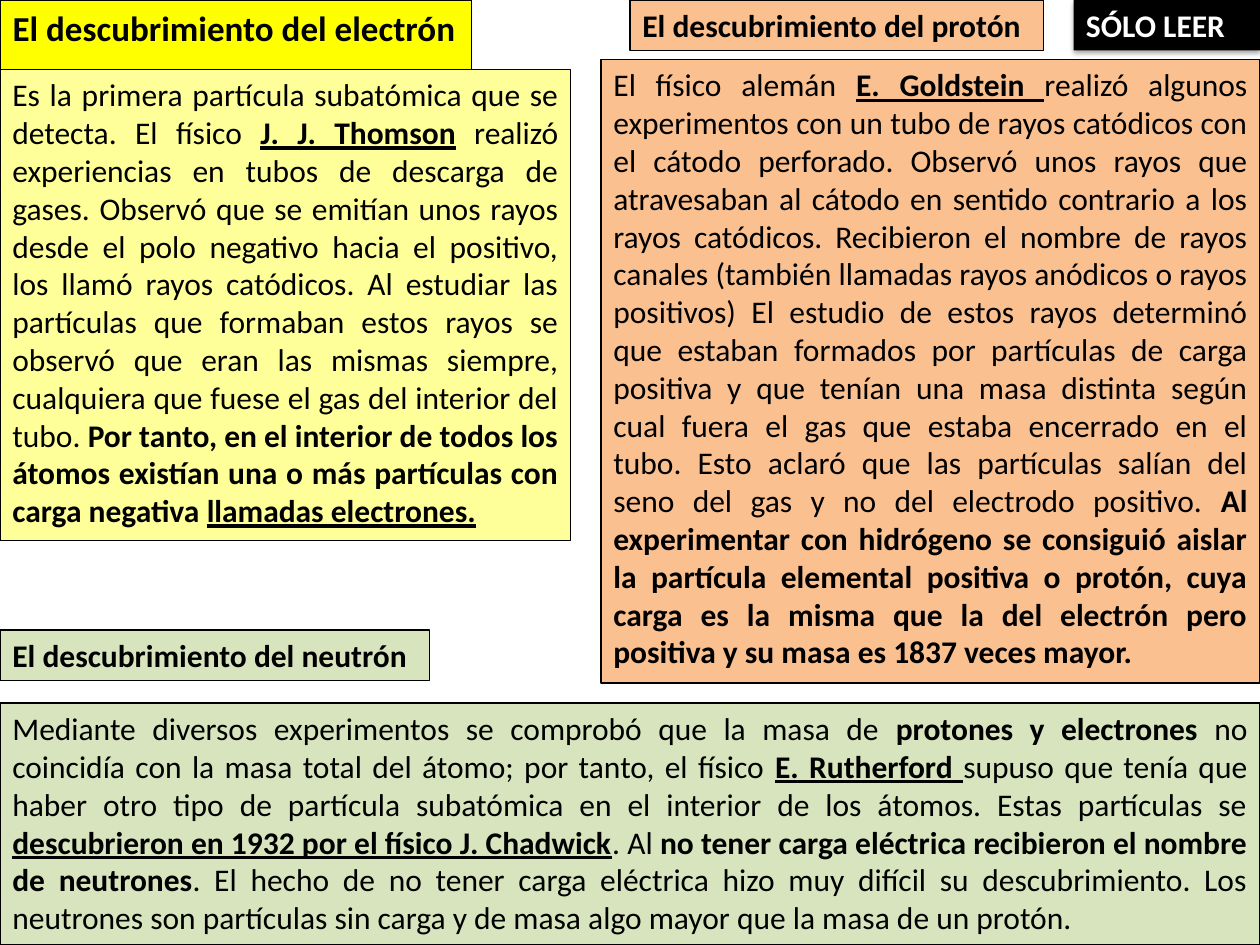
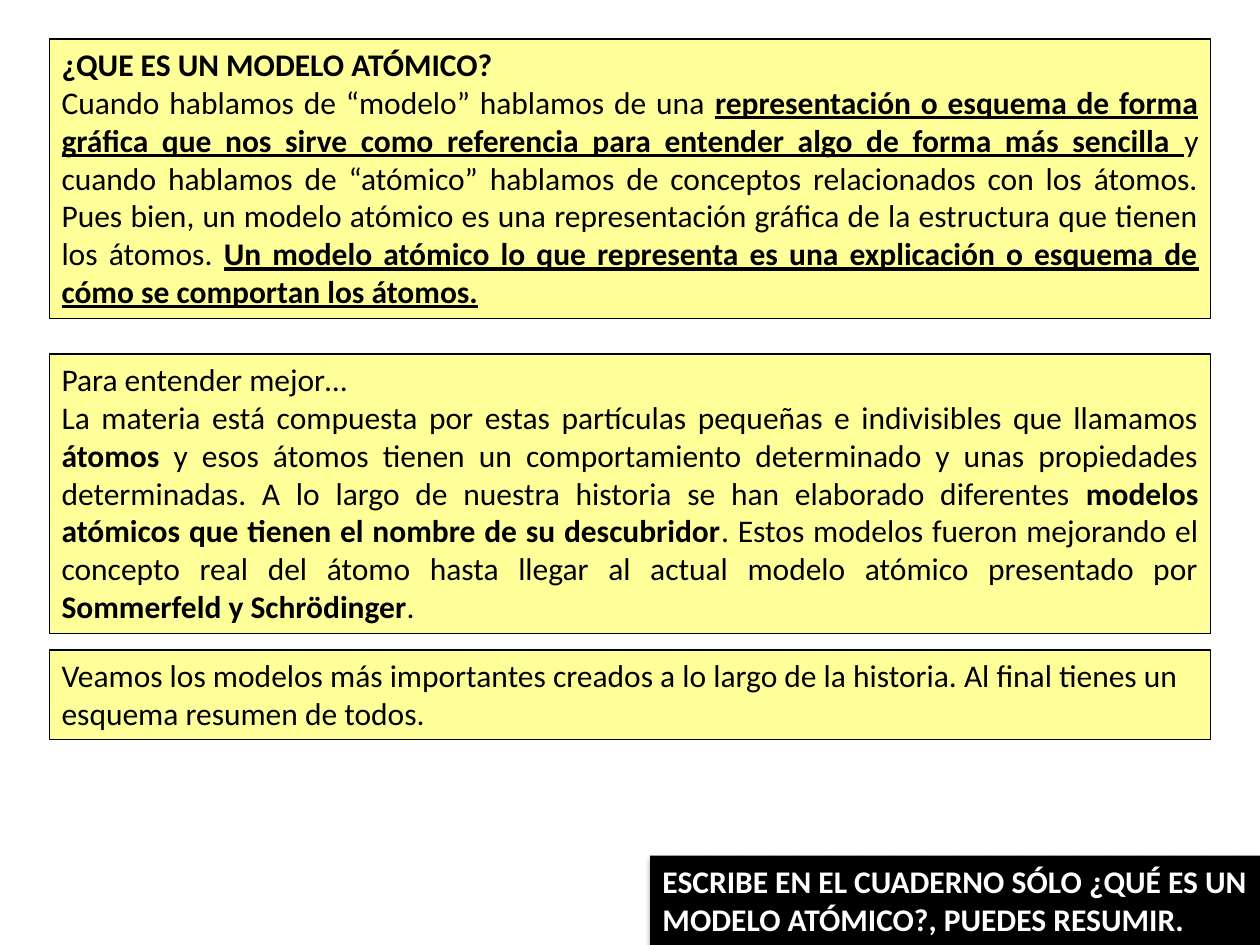
from dataclasses import dataclass

from lxml import etree
from pptx import Presentation
from pptx.dml.color import RGBColor
from pptx.enum import text
from pptx.oxml.ns import qn
from pptx.util import Inches, Pt


@dataclass(frozen=True)
class Theme:
    font: str = "Calibri"
    heading_size: int = 20
    text_size: int = 18
    line_width: float = 0.75
    ink: str = "000000"
    paper: str = "FFFFFF"
    bright_yellow: str = "FFFF00"
    yellow: str = "FFFF99"
    orange: str = "FAC090"
    green: str = "D7E4BD"


THEME = Theme()
JUSTIFY = text.PP_ALIGN.JUSTIFY
LEFT = text.PP_ALIGN.LEFT

PLAIN = {"bold": False, "underline": False}
BOLD = {"bold": True, "underline": False}
KEY = {"bold": True, "underline": True}

SLIDE_WIDTH, SLIDE_HEIGHT = 10, 7.5
HEADING_HEIGHT = 0.4
MODEL_LEFT = 0.39
MODEL_WIDTH = SLIDE_WIDTH - 2 * MODEL_LEFT

ELECTRON = [[
    ("Es la primera partícula subatómica que se detecta. El físico ", PLAIN),
    ("J. J. Thomson", KEY),
    (" realizó experiencias en tubos de descarga de gases. Observó que se "
     "emitían unos rayos desde el polo negativo hacia el positivo, los llamó "
     "rayos catódicos. Al estudiar las partículas que formaban estos rayos se "
     "observó que eran las mismas siempre, cualquiera que fuese el gas del "
     "interior del tubo. ", PLAIN),
    ("Por tanto, en el interior de todos los átomos existían una o más "
     "partículas con carga negativa ", BOLD),
    ("llamadas electrones.", KEY),
]]

PROTON = [[
    ("El físico alemán ", PLAIN),
    ("E. Goldstein ", KEY),
    ("realizó algunos experimentos con un tubo de rayos catódicos con el "
     "cátodo perforado. Observó unos rayos que atravesaban al cátodo en "
     "sentido contrario a los rayos catódicos. Recibieron el nombre de rayos "
     "canales (también llamadas rayos anódicos o rayos positivos) El estudio "
     "de estos rayos determinó que estaban formados por partículas de carga "
     "positiva y que tenían una masa distinta según cual fuera el gas que "
     "estaba encerrado en el tubo. Esto aclaró que las partículas salían del "
     "seno del gas y no del electrodo positivo. ", PLAIN),
    ("Al experimentar con hidrógeno se consiguió aislar la partícula "
     "elemental positiva o protón, cuya carga es la misma que la del electrón "
     "pero positiva y su masa es 1837 veces mayor.", BOLD),
]]

NEUTRON = [[
    ("Mediante diversos experimentos se comprobó que la masa de ", PLAIN),
    ("protones y electrones ", BOLD),
    ("no coincidía con la masa total del átomo; por tanto, el físico ", PLAIN),
    ("E. Rutherford ", KEY),
    ("supuso que tenía que haber otro tipo de partícula subatómica en el "
     "interior de los átomos. Estas partículas se ", PLAIN),
    ("descubrieron en 1932 por el físico J. Chadwick", KEY),
    (". Al ", PLAIN),
    ("no tener carga eléctrica recibieron el nombre de neutrones", BOLD),
    (". El hecho de no tener carga eléctrica hizo muy difícil su "
     "descubrimiento. Los neutrones son partículas sin carga y de masa algo "
     "mayor que la masa de un protón.", PLAIN),
]]

MODEL_DEFINITION = [
    [("¿QUE ES UN MODELO ATÓMICO? ", BOLD)],
    [
        ("Cuando hablamos de “modelo” hablamos de una ", PLAIN),
        ("representación o esquema de forma gráfica que nos sirve como "
         "referencia para entender algo de forma más sencilla ", KEY),
        ("y cuando hablamos de “atómico” hablamos de conceptos relacionados "
         "con los átomos. Pues bien, un modelo atómico es una representación "
         "gráfica de la estructura que tienen los átomos. ", PLAIN),
        ("Un modelo atómico lo que representa es una explicación o esquema "
         "de cómo se comportan los átomos.", KEY),
    ],
]

MODEL_HISTORY = [
    [("Para entender mejor…", PLAIN)],
    [
        ("La materia está compuesta por estas partículas pequeñas e "
         "indivisibles que llamamos ", PLAIN),
        ("átomos", BOLD),
        (" y esos átomos tienen un comportamiento determinado y unas "
         "propiedades determinadas. A lo largo de nuestra historia se han "
         "elaborado diferentes ", PLAIN),
        ("modelos atómicos que tienen el nombre de su descubridor", BOLD),
        (". Estos modelos fueron mejorando el concepto real del átomo hasta "
         "llegar al actual modelo atómico presentado por ", PLAIN),
        ("Sommerfeld y Schrödinger", BOLD),
        (". ", PLAIN),
    ],
]

MODEL_PREVIEW = [[
    ("Veamos los modelos más importantes creados a lo largo de la historia. "
     "Al final tienes un esquema resumen de todos.", PLAIN),
]]


def apply(target, values):
    for name, value in values.items():
        setattr(target, name, value)


def place(box, left, top, width, height):
    apply(box, {"left": Inches(left), "top": Inches(top),
                "width": Inches(width), "height": Inches(height)})


def paint(box, fill, outline=True):
    box.fill.solid()
    box.fill.fore_color.rgb = RGBColor.from_string(fill)
    if outline:
        box.line.color.rgb = RGBColor.from_string(THEME.ink)
        box.line.width = Pt(THEME.line_width)


def write(box, paragraphs, align=LEFT, size=THEME.text_size,
          color=THEME.ink, wrap=True):
    """Fill the box with paragraphs, each a list of (words, emphasis) runs."""
    frame = box.text_frame
    apply(frame, {"word_wrap": wrap,
                  "auto_size": text.MSO_AUTO_SIZE.SHAPE_TO_FIT_TEXT,
                  "vertical_anchor": text.MSO_ANCHOR.TOP})
    for index, runs in enumerate(paragraphs):
        paragraph = frame.add_paragraph() if index else frame.paragraphs[0]
        paragraph.alignment = align
        for words, emphasis in runs:
            run = paragraph.add_run()
            run.text = words
            apply(run.font, {"name": THEME.font, "size": Pt(size), **emphasis})
            run.font.color.rgb = RGBColor.from_string(color)


def add_panel(slide, area, fill, paragraphs, align=JUSTIFY):
    panel = slide.shapes.add_textbox(*map(Inches, area))
    paint(panel, fill)
    write(panel, paragraphs, align)


def add_heading(slide, area, fill, words):
    heading = slide.shapes.add_textbox(*map(Inches, area))
    paint(heading, fill)
    write(heading, [[(words, BOLD)]], wrap=False)


def set_title(slide, area, fill, words):
    title = slide.shapes.title
    place(title, *area)
    paint(title, fill)
    write(title, [[(words, BOLD)]], size=THEME.heading_size, wrap=False)


def add_shadow(box):
    effects = etree.SubElement(box._element.spPr, qn("a:effectLst"))
    shadow = etree.SubElement(effects, qn("a:outerShdw"), {
        "blurRad": str(Pt(3.1)), "dist": str(Pt(1.8)),
        "dir": "5400000", "rotWithShape": "0"})
    color = etree.SubElement(shadow, qn("a:srgbClr"), val=THEME.ink)
    etree.SubElement(color, qn("a:alpha"), val="35000")


def add_instruction(slide, width, height, words, top=0):
    """Black label for the class, flush with the right edge."""
    label = slide.shapes.add_textbox(
        *map(Inches, (SLIDE_WIDTH - width, top, width, height)))
    paint(label, THEME.ink, outline=False)
    add_shadow(label)
    write(label, [[(words, BOLD)]], color=THEME.paper)


def build_particles(deck):
    slide = deck.slides.add_slide(deck.slide_layouts.get_by_name("Title Only"))
    set_title(slide, (0, 0, 3.74, 0.44), THEME.bright_yellow,
              "El descubrimiento del electrón")
    add_panel(slide, (0, 0.55, 4.53, 3.74), THEME.yellow, ELECTRON)
    add_panel(slide, (4.77, 0.47, 5.23, 4.95), THEME.orange, PROTON)
    add_heading(slide, (5, 0, 3.28, HEADING_HEIGHT), THEME.orange,
                "El descubrimiento del protón")
    add_panel(slide, (0, 5.58, SLIDE_WIDTH, 1.92), THEME.green, NEUTRON)
    add_heading(slide, (0, 5, 3.41, HEADING_HEIGHT), THEME.green,
                "El descubrimiento del neutrón")
    add_instruction(slide, 1.48, HEADING_HEIGHT, "SÓLO LEER")


def build_atomic_model(deck):
    slide = deck.slides.add_slide(deck.slide_layouts.get_by_name("Blank"))
    for top, height, paragraphs, align in (
            (0.31, 2.22, MODEL_DEFINITION, JUSTIFY),
            (2.81, 2.22, MODEL_HISTORY, JUSTIFY),
            (5.16, 0.71, MODEL_PREVIEW, LEFT)):
        add_panel(slide, (MODEL_LEFT, top, MODEL_WIDTH, height),
                  THEME.yellow, paragraphs, align)
    note_height = 0.71
    add_instruction(slide, 4.84, note_height,
                    "ESCRIBE EN EL CUADERNO SÓLO ¿QUÉ ES UN MODELO ATÓMICO?, "
                    "PUEDES RESUMIR.", top=SLIDE_HEIGHT - note_height)


def main():
    deck = Presentation()
    apply(deck, {"slide_width": Inches(SLIDE_WIDTH),
                 "slide_height": Inches(SLIDE_HEIGHT)})
    build_particles(deck)
    build_atomic_model(deck)
    deck.save("out.pptx")


if __name__ == "__main__":
    main()
